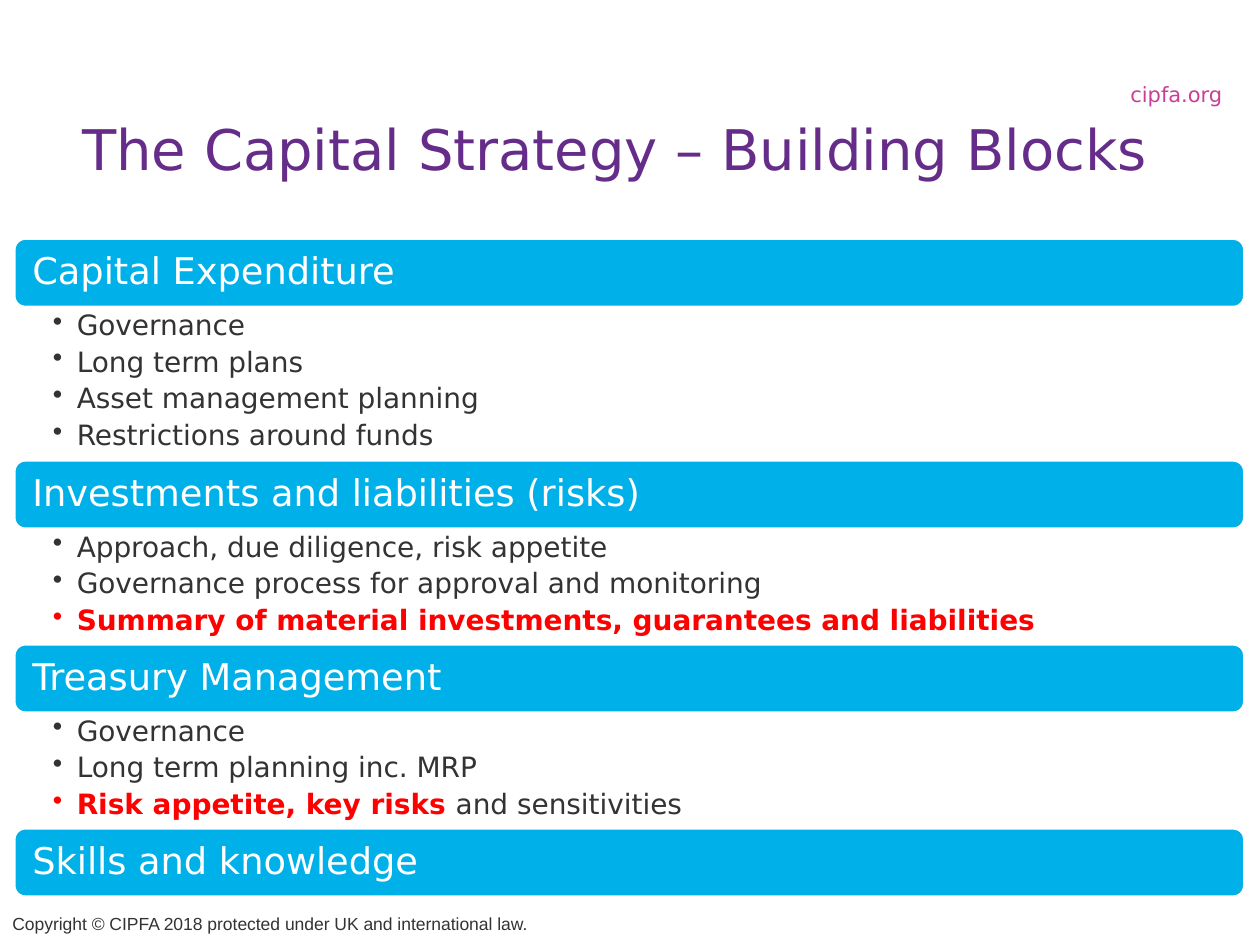
from pptx import Presentation
from pptx.dml.color import RGBColor
from pptx.enum.shapes import MSO_SHAPE
from pptx.enum.text import MSO_ANCHOR, PP_ALIGN
from pptx.oxml.ns import qn
from pptx.util import Inches, Pt
from lxml import etree

ROUNDED = MSO_SHAPE.ROUNDED_RECTANGLE
TOP, MIDDLE = MSO_ANCHOR.TOP, MSO_ANCHOR.MIDDLE
LEFT, CENTER, RIGHT = PP_ALIGN.LEFT, PP_ALIGN.CENTER, PP_ALIGN.RIGHT

WHITE = RGBColor(0xFF, 0xFF, 0xFF)
BLUE = RGBColor(0x00, 0xB0, 0xE8)
PURPLE = RGBColor(0x65, 0x2D, 0x89)
PINK = RGBColor(0xCA, 0x3E, 0x96)
GREY = RGBColor(0x33, 0x33, 0x33)
RED = RGBColor(0xFF, 0x00, 0x00)

FONT = "DejaVu Sans"
FOOTER_FONT = "Arial"

# Block layout, in inches
BLOCK_LEFT, BLOCK_WIDTH, BLOCKS_TOP = 0.11, 9.77, 1.89
BAR_HEIGHT, BULLET_HEIGHT, LIST_PADDING = 0.55, 0.3, 0.01

# Heading and bullets; each bullet is a (highlighted, plain) pair
BLOCKS = [
    ("Capital Expenditure", [
        ("", "Governance"),
        ("", "Long term plans"),
        ("", "Asset management planning"),
        ("", "Restrictions around funds"),
    ]),
    ("Investments and liabilities (risks)", [
        ("", "Approach, due diligence, risk appetite"),
        ("", "Governance process for approval and monitoring"),
        ("Summary of material investments, guarantees and liabilities", ""),
    ]),
    ("Treasury Management", [
        ("", "Governance"),
        ("", "Long term planning inc. MRP"),
        ("Risk appetite, key risks ", "and sensitivities"),
    ]),
    ("Skills and knowledge", []),
]


class SlideBuilder:
    """Holds the style and the current slide."""

    def __init__(self, slide):
        self.slide = slide

    def set_font(self, font, size, color, name=FONT):
        font.name, font.size, font.color.rgb = name, Pt(size), color

    def set_frame(self, frame, insets, anchor=TOP, wrap=True):
        frame.margin_left, frame.margin_top, frame.margin_right, frame.margin_bottom = (
            Inches(inset) for inset in insets)
        frame.vertical_anchor = anchor
        frame.word_wrap = wrap

    def add_box(self, left, top, width, height):
        return self.slide.shapes.add_textbox(
            Inches(left), Inches(top), Inches(width), Inches(height))

    def title(self, text, left, top, width, height):
        title = self.slide.shapes.title
        title.left, title.top = Inches(left), Inches(top)
        title.width, title.height = Inches(width), Inches(height)
        self.set_frame(title.text_frame, (0.1, 0.08, 0.1, 0.05))
        title.text_frame.text = text
        para = title.text_frame.paragraphs[0]
        para.alignment = CENTER
        self.set_font(para.font, 32, PURPLE)

    def label(self, text, left, top, width, height, size, color,
              align=LEFT, name=FONT, wrap=True):
        frame = self.add_box(left, top, width, height).text_frame
        self.set_frame(frame, (0.1, 0.05, 0.1, 0.05), wrap=wrap)
        frame.text = text
        para = frame.paragraphs[0]
        para.alignment = align
        self.set_font(para.font, size, color, name)

    def bar(self, text, top):
        bar = self.slide.shapes.add_shape(
            ROUNDED, Inches(BLOCK_LEFT), Inches(top),
            Inches(BLOCK_WIDTH), Inches(BAR_HEIGHT))
        bar.shadow.inherit = False
        bar.fill.solid()
        bar.fill.fore_color.rgb = BLUE
        bar.line.color.rgb = WHITE
        bar.line.width = Pt(2)
        self.set_frame(bar.text_frame, (0.12, 0.09, 0.12, 0.09), MIDDLE)
        bar.text_frame.text = text
        para = bar.text_frame.paragraphs[0]
        para.alignment = LEFT
        para.line_spacing = 0.9
        self.set_font(para.font, 21, WHITE)

    def bullets(self, items, top, height):
        frame = self.add_box(BLOCK_LEFT, top, BLOCK_WIDTH, height).text_frame
        self.set_frame(frame, (0.31, 0.03, 0.16, 0.03))
        for index, (highlighted, plain) in enumerate(items):
            para = frame.paragraphs[0] if index == 0 else frame.add_paragraph()
            para.line_spacing = 0.9
            para.space_after = Pt(3.7)
            properties = para._p.get_or_add_pPr()
            properties.set("marL", str(Inches(0.19)))
            properties.set("indent", str(-Inches(0.19)))
            etree.SubElement(properties, qn("a:buChar")).set("char", "•")
            self.set_font(para.font, 16, GREY)
            for text, color, bold in ((highlighted, RED, True), (plain, GREY, False)):
                if text:
                    span = para.add_run()
                    span.text = text
                    self.set_font(span.font, 16, color)
                    span.font.bold = bold


def main():
    deck = Presentation()
    deck.slide_width, deck.slide_height = Inches(10), Inches(7.5)
    page = SlideBuilder(deck.slides.add_slide(deck.slide_layouts[5]))

    # Header
    page.label("cipfa.org", 6.65, 0.6, 3.15, 0.3, 12, PINK, align=RIGHT)
    page.title("The Capital Strategy – Building Blocks", 0.35, 0.83, 9.07, 0.94)

    # Building blocks, stacked from the top
    top = BLOCKS_TOP
    for heading, items in BLOCKS:
        page.bar(heading, top)
        top += BAR_HEIGHT
        if items:
            height = len(items) * BULLET_HEIGHT + LIST_PADDING
            page.bullets(items, top, height)
            top += height

    # Footer
    page.label("Copyright © CIPFA 2018 protected under UK and international law.",
               0, 7.2, 4.97, 0.27, 10, GREY, name=FOOTER_FONT, wrap=False)

    deck.save("out.pptx")


if __name__ == "__main__":
    main()
